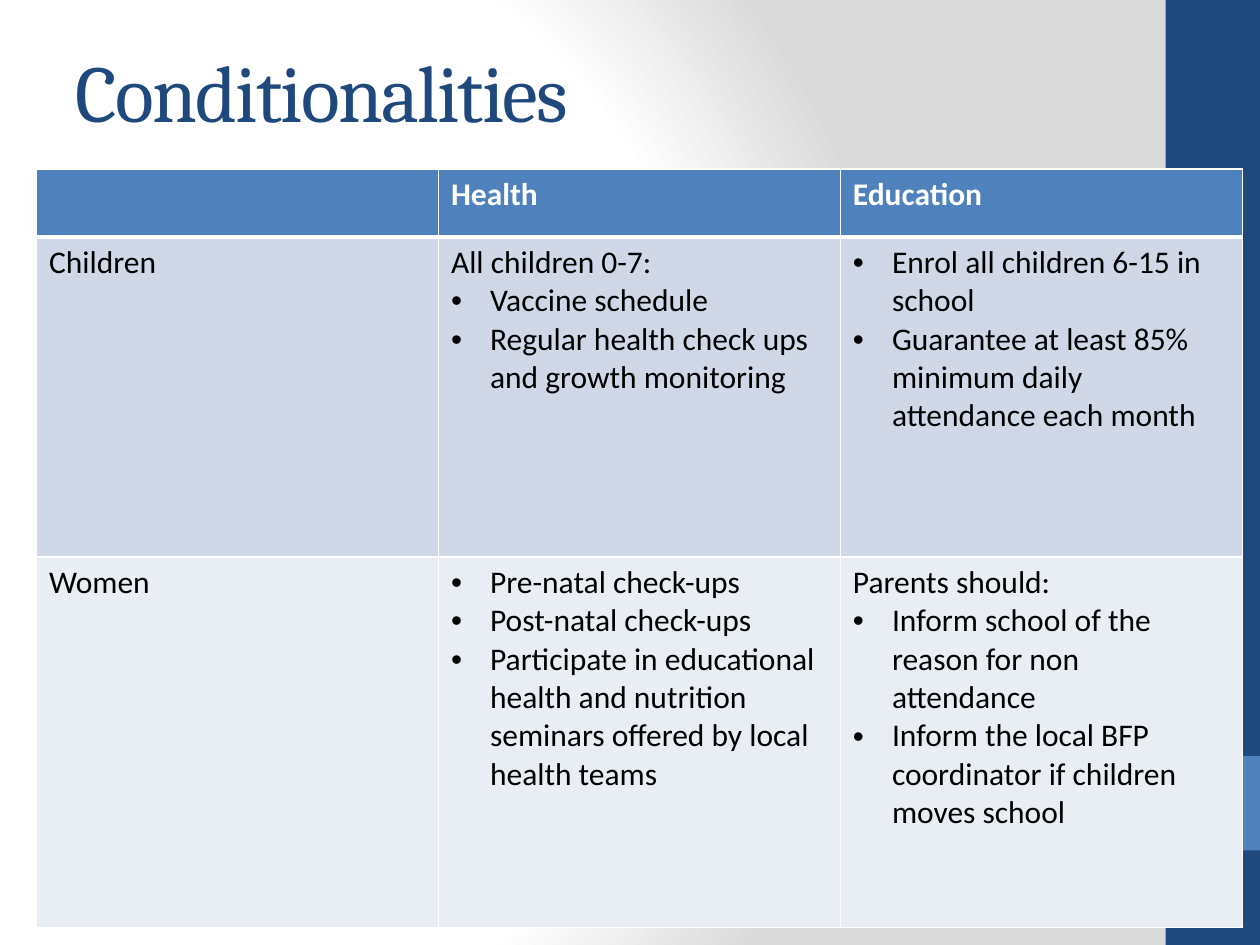
"""Build the Conditionalities slide: a title over a table of health and education duties."""
from pptx import Presentation
from pptx.dml.color import RGBColor
from pptx.enum.shapes import MSO_SHAPE
from pptx.enum.text import MSO_ANCHOR, PP_ALIGN
from pptx.oxml import parse_xml
from pptx.oxml.ns import nsdecls
from pptx.util import Inches, Pt

COLORS = {
    "navy": "1F497D", "blue": "4F81BD", "white": "FFFFFF", "black": "000000",
    "gray": "DADADA", "band": "D0D8E8", "pale": "E9EDF4",
}
BULLET = "• "
ROWS = [
    (0.54, "blue", [[], ["Health"], ["Education"]]),
    (2.54, "band", [
        ["Children"],
        ["All children 0-7:", "• Vaccine schedule",
         "• Regular health check ups and growth monitoring"],
        ["• Enrol all children 6-15 in school",
         "• Guarantee at least 85% minimum daily attendance each month"],
    ]),
    (2.94, "pale", [
        ["Women"],
        ["• Pre-natal check-ups", "• Post-natal check-ups",
         "• Participate in educational health and nutrition seminars offered by local health teams"],
        ["Parents should:", "• Inform school of the reason for non attendance",
         "• Inform the local BFP coordinator if children moves school"],
    ]),
]


def color(name):
    return RGBColor.from_string(COLORS[name])


def solid_xml(name):
    return f'<a:solidFill><a:srgbClr val="{COLORS[name]}"/></a:solidFill>'


deck = Presentation()
deck.slide_width, deck.slide_height = Inches(10), Inches(7.5)
width, height = deck.slide_width, deck.slide_height
page = deck.slides.add_slide(deck.slide_layouts[5])

page.background.fill.solid()
background = page.element.cSld.bg.bgPr
stops = "".join(
    f'<a:gs pos="{share * 1000}"><a:srgbClr val="{COLORS[name]}"/></a:gs>'
    for share, name in [(0, "white"), (75, "white"), (100, "gray")]
)
background.replace(background[0], parse_xml(
    f'<a:gradFill {nsdecls("a")} rotWithShape="1"><a:gsLst>{stops}</a:gsLst>'
    '<a:path path="circle"><a:fillToRect l="20000" t="50000" r="100000" b="50000"/>'
    '</a:path></a:gradFill>'
))

strip = int(width * 0.075)
for top, tall, name in [(0, height, "navy"), (int(height * 0.8), strip, "blue")]:
    bar = page.shapes.add_shape(MSO_SHAPE.RECTANGLE, width - strip, top, strip, tall)
    bar.shadow.inherit = False
    bar.fill.solid()
    bar.fill.fore_color.rgb = color(name)
    bar.line.fill.background()

title = page.shapes.title
title.left, title.top = Inches(0.5), Inches(0.09)
title.width, title.height = Inches(8.33), Inches(1.25)
title.text_frame.text = "Conditionalities"
title.text_frame.vertical_anchor = MSO_ANCHOR.MIDDLE
para = title.text_frame.paragraphs[0]
para.alignment = PP_ALIGN.LEFT
span = para.runs[0]
span.font.name, span.font.size = "Cambria", Pt(46)
span.font.color.rgb = color("navy")
span.font._element.set("spc", "-100")
page.shapes._spTree.append(title._element)

column = Inches(3.19)
table = page.shapes.add_table(
    len(ROWS), 3, Inches(0.29), Inches(1.34), column * 3, Inches(6.02)
).table
table.horz_banding = False
for table_column in table.columns:
    table_column.width = column

for row, (tall, fill, cells) in enumerate(ROWS):
    table.rows[row].height = Inches(tall)
    for index, lines in enumerate(cells):
        cell = table.cell(row, index)
        properties = cell._tc.get_or_add_tcPr()
        for side in "LRTB":
            points = 3 if (row, side) in [(0, "B"), (1, "T")] else 1
            properties.append(parse_xml(
                f'<a:ln{side} {nsdecls("a")} w="{Pt(points)}">{solid_xml("white")}</a:ln{side}>'
            ))
        cell.fill.solid()
        cell.fill.fore_color.rgb = color(fill)
        cell.text_frame.text = "\n".join(line.removeprefix(BULLET) for line in lines)
        for line, para in zip(lines, cell.text_frame.paragraphs):
            if line.startswith(BULLET):
                layout = para._p.get_or_add_pPr()
                layout.set("marL", str(Inches(0.31)))
                layout.set("indent", str(-Inches(0.31)))
                layout.append(parse_xml(f'<a:buFont {nsdecls("a")} typeface="Arial"/>'))
                layout.append(parse_xml(f'<a:buChar {nsdecls("a")} char="•"/>'))
            font = para.runs[0].font
            font.name, font.size, font.bold = "Calibri", Pt(18), row == 0
            font.color.rgb = color("black" if row else "white")

deck.save("out.pptx")
